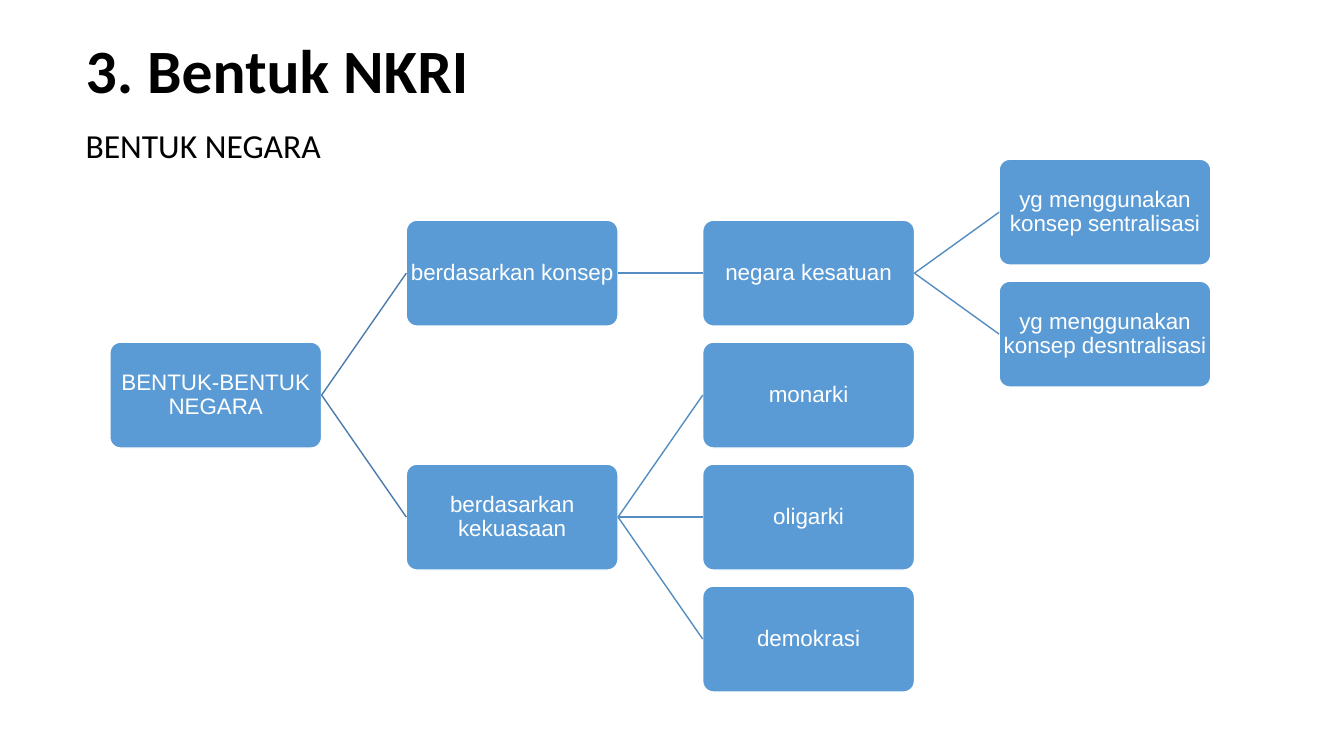
from lxml import etree
from pptx import Presentation
from pptx.dml.color import RGBColor
from pptx.enum.shapes import MSO_CONNECTOR, MSO_SHAPE
from pptx.enum.text import MSO_ANCHOR, PP_ALIGN
from pptx.oxml.ns import qn
from pptx.util import Inches, Pt

BLACK = RGBColor(0x00, 0x00, 0x00)
WHITE = RGBColor(0xFF, 0xFF, 0xFF)
BLUE = RGBColor(0x5B, 0x9B, 0xD5)
ROOT_LINE = RGBColor(0x49, 0x7C, 0xAB)
BRANCH_LINE = RGBColor(0x53, 0x8D, 0xC1)

ROUNDED = MSO_SHAPE.ROUNDED_RECTANGLE
STRAIGHT = MSO_CONNECTOR.STRAIGHT
LEFT, CENTER = PP_ALIGN.LEFT, PP_ALIGN.CENTER
TOP, MIDDLE = MSO_ANCHOR.TOP, MSO_ANCHOR.MIDDLE
LEFT_SIDE, RIGHT_SIDE = 1, 3

TREE_LEFT, TREE_TOP = 1.09, 1.58
COLUMN_STEP, ROW_STEP = 2.94, 1.21
NODE_WIDTH, NODE_HEIGHT = 2.1, 1.05

# Each node: text, row, children
TREE = ("BENTUK-BENTUK NEGARA", 1.5, [
    ("berdasarkan konsep", 0.5, [
        ("negara kesatuan", 0.5, [
            ("yg menggunakan konsep sentralisasi", 0, []),
            ("yg menggunakan konsep desntralisasi", 1, []),
        ]),
    ]),
    ("berdasarkan kekuasaan", 2.5, [
        ("monarki", 1.5, []),
        ("oligarki", 2.5, []),
        ("demokrasi", 3.5, []),
    ]),
])


class TreeSlide:
    heading_font = "Calibri"
    node_font = "Arial"

    def __init__(self, presentation):
        self.slide = presentation.slides.add_slide(presentation.slide_layouts[5])

    def set_text(self, shape, text, font, size, color, align, anchor, bold=False):
        frame = shape.text_frame
        frame.word_wrap = True
        frame.vertical_anchor = anchor
        frame.text = text
        paragraph = frame.paragraphs[0]
        paragraph.alignment = align
        paragraph.line_spacing = 0.9
        paragraph.space_before = Pt(0)
        paragraph.font.name = font
        paragraph.font.size = Pt(size)
        paragraph.font.bold = bold
        paragraph.font.color.rgb = color

    def title(self, text):
        shape = self.slide.shapes.title
        shape.left, shape.top = Inches(0.75), Inches(0.34)
        shape.width, shape.height = Inches(11.5), Inches(0.78)
        self.set_text(shape, text, self.heading_font, 44, BLACK, LEFT, MIDDLE, True)

    def subtitle(self, text):
        shape = self.slide.shapes.add_textbox(
            Inches(0.75), Inches(1.24), Inches(11.67), Inches(0.5))
        self.set_text(shape, text, self.heading_font, 24, BLACK, LEFT, TOP)

    def node(self, text, column, row):
        shape = self.slide.shapes.add_shape(
            ROUNDED,
            Inches(TREE_LEFT + column * COLUMN_STEP),
            Inches(TREE_TOP + row * ROW_STEP),
            Inches(NODE_WIDTH), Inches(NODE_HEIGHT))
        shape.adjustments[0] = 0.1
        shape.shadow.inherit = False
        shape.fill.solid()
        shape.fill.fore_color.rgb = BLUE
        shape.line.color.rgb = WHITE
        shape.line.width = Pt(1)
        frame = shape.text_frame
        frame.margin_left = frame.margin_right = 0
        frame.margin_top = frame.margin_bottom = Inches(0.01)
        self.set_text(shape, text, self.node_font, 16, WHITE, CENTER, MIDDLE)
        return shape

    def link(self, parent, child, color):
        connector = self.slide.shapes.add_connector(STRAIGHT, 0, 0, 0, 0)
        connector.begin_connect(parent, RIGHT_SIDE)
        connector.end_connect(child, LEFT_SIDE)
        connector.line.color.rgb = color
        connector.line.width = Pt(1)
        etree.SubElement(connector._element.spPr, qn("a:effectLst"))

    def tree(self, branch, column=0):
        """Draw a branch with everything to its right and return its node."""
        text, row, children = branch
        parent = self.node(text, column, row)
        color = BRANCH_LINE if column else ROOT_LINE
        for child in children:
            self.link(parent, self.tree(child, column + 1), color)
        return parent


def main():
    presentation = Presentation()
    presentation.slide_width = Inches(13.33)
    presentation.slide_height = Inches(7.5)
    slide = TreeSlide(presentation)
    slide.title("3. Bentuk NKRI")
    slide.subtitle("BENTUK NEGARA")
    slide.tree(TREE)
    presentation.save("out.pptx")


if __name__ == "__main__":
    main()
